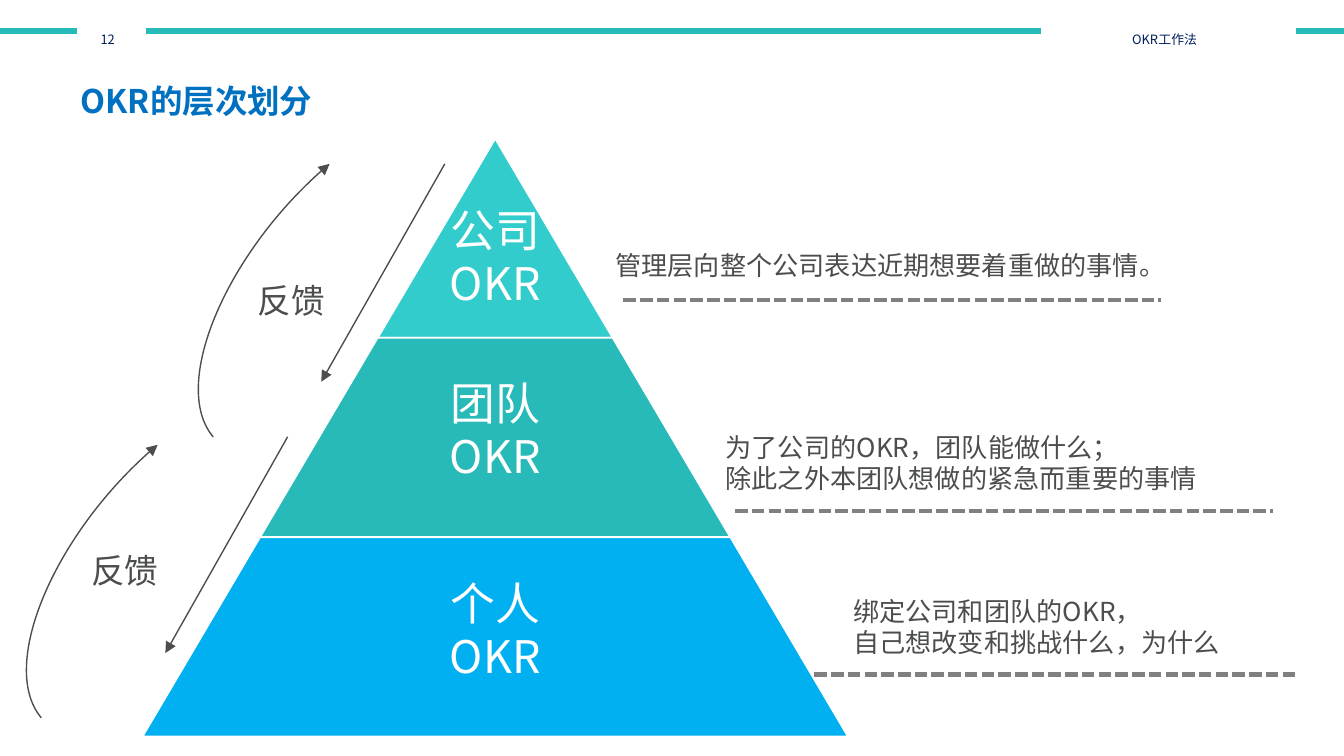
import pptx
import pptx.util
import pptx.dml.color
import pptx.enum.dml
import pptx.enum.shapes
import pptx.enum.text
import lxml.etree
import pptx.oxml.ns

Pt = pptx.util.Pt
qn = pptx.oxml.ns.qn
Align = pptx.enum.text.PP_ALIGN
Anchor = pptx.enum.text.MSO_ANCHOR
Shape = pptx.enum.shapes.MSO_SHAPE
Link = pptx.enum.shapes.MSO_CONNECTOR

THEME = {
    "font": "Noto Sans CJK SC",
    "teal": "28B9B9", "aqua": "33CCCC", "sky": "00B0F0", "white": "FFFFFF",
    "navy": "002060", "blue": "0070C0", "ink": "4B4D4F", "gray": "808080",
    "title": 30, "level": 24, "label": 18, "note": 14, "head": 12,
}
WIDTH, HEIGHT = 720, 405

TITLE = "OKR的层次划分"
HEADS = [("12", 41.8, 36), ("OKR工作法", 558, 136)]
LEVELS = [
    (["公司", "OKR"], "aqua", 126, 28.4),
    (["团队", "OKR"], "teal", 163.4, 0),
    (["个人", "OKR"], "sky", 245.5, 0),
]
NOTES = [
    (["管理层向整个公司表达近期想要着重做的事情。"], 322.6, 130.3, 334, 622, 160.6),
    (["为了公司的OKR，团队能做什么；", "除此之外本团队想做的紧急而重要的事情"],
     381.6, 227.5, 393.8, 681.8, 273.6),
    (["绑定公司和团队的OKR，", "自己想改变和挑战什么，为什么"],
     450, 315.4, 436.3, 694, 361.4),
]
LOOPS = [
    ("反馈", (131, 146.2), (238.3, 87.8, 172.1, 204.5), (109.4, 90)),
    ("反馈", (41.8, 290.9), (154.1, 234, 88.6, 349.9), (17.3, 240.5)),
]
MID, TOP, STEP, RISE = 265.3, 74.2, 126, 106.8
CURVE_W, CURVE_H, TURN = 72, 141.8, 230


def color(name):
    return pptx.dml.color.RGBColor.from_string(THEME[name])


def write(shape, lines, size, tint, bold=False, align=None, sub=False):
    frame = shape.text_frame
    frame.word_wrap = True
    frame.text = "\n".join(lines)
    for para in frame.paragraphs:
        para.alignment = align
        for run in para.runs:
            font = run.font
            font.name = THEME["font"]
            font.size = Pt(THEME[size])
            font.bold = bold
            font.color.rgb = color(tint)
            props = run._r.get_or_add_rPr()
            east = lxml.etree.SubElement(props, qn("a:ea"))
            east.set("typeface", THEME["font"])
            if sub:
                props.set("baseline", "-25000")
    return frame


def add_box(slide, left, top, width, height):
    return slide.shapes.add_textbox(Pt(left), Pt(top), Pt(width), Pt(height))


def add_form(slide, kind, left, top, width, height, fill, edge):
    form = slide.shapes.add_shape(kind, Pt(left), Pt(top), Pt(width), Pt(height))
    form.shadow.inherit = False
    form.fill.solid()
    form.fill.fore_color.rgb = color(fill)
    form.line.color.rgb = color("white")
    form.line.width = Pt(edge)
    return form


def add_line(slide, ends, tint, width, kind=Link.STRAIGHT, arrow=False):
    line = slide.shapes.add_connector(kind, *[Pt(end) for end in ends])
    line.line.color.rgb = color(tint)
    line.line.width = Pt(width)
    props = line._element.spPr
    if arrow:
        tail = lxml.etree.SubElement(props.find(qn("a:ln")), qn("a:tailEnd"))
        tail.set("type", "triangle")
    lxml.etree.SubElement(props, qn("a:effectLst"))
    return line


def add_curve(slide, left, top):
    ends = (left, top, left + CURVE_W, top + CURVE_H)
    curve = add_line(slide, ends, "ink", 0.75, Link.CURVE, True)
    props = curve._element.spPr
    props.find(qn("a:prstGeom")).set("prst", "curvedConnector2")
    props.find(qn("a:xfrm")).set("rot", str(TURN * 60000))


def add_heads(slide):
    add_line(slide, (0, 16.6, WIDTH, 16.6), "teal", 3)
    for text, left, width in HEADS:
        form = add_form(slide, Shape.RECTANGLE, left, 6.5, width, 21.6, "white", 0.75)
        frame = write(form, [text], "head", "navy", align=Align.CENTER, sub=True)
        frame.margin_right = Pt(11.2)
        frame.vertical_anchor = Anchor.MIDDLE


def add_title(slide):
    title = slide.shapes.title
    title.left, title.top, title.width, title.height = Pt(36), Pt(20.2), Pt(424.8), Pt(43.9)
    frame = write(title, [TITLE], "title", "blue", True, Align.LEFT, True)
    frame.vertical_anchor = Anchor.MIDDLE
    frame.paragraphs[0].line_spacing = 0.9


def add_levels(slide):
    for rank, (lines, fill, room, inset) in enumerate(LEVELS):
        top, width = TOP + rank * RISE, STEP * (rank + 1)
        form = add_form(slide, Shape.TRAPEZOID, MID - width / 2, top, width, RISE, fill, 1)
        form.adjustments[0] = STEP / 2 / RISE
        box = add_box(slide, MID - room / 2, top, room, RISE)
        frame = write(box, lines, "level", "white", align=Align.CENTER)
        frame.vertical_anchor = Anchor.MIDDLE
        frame.margin_left = frame.margin_right = frame.margin_bottom = Pt(2.4)
        frame.margin_top = Pt(2.4 + inset)
        for para in frame.paragraphs:
            para.line_spacing = Pt(20)
            para.space_after = Pt(8.4)


def add_loops(slide):
    for text, place, ends, bend in LOOPS:
        add_line(slide, ends, "ink", 0.75, arrow=True)
        add_curve(slide, *bend)
        write(add_box(slide, *place, 53.3, 28.8), [text], "label", "ink")


def add_notes(slide):
    for lines, left, top, start, stop, level in NOTES:
        rule = add_line(slide, (start, level, stop, level), "gray", 2.25)
        rule.line.dash_style = pptx.enum.dml.MSO_LINE.SQUARE_DOT
        width = min(315.4, WIDTH - left)
        height = 7.2 + 17 * len(lines)
        write(add_box(slide, left, top, width, height), lines, "note", "ink")


def main():
    deck = pptx.Presentation()
    deck.slide_width, deck.slide_height = Pt(WIDTH), Pt(HEIGHT)
    slide = deck.slides.add_slide(deck.slide_layouts[5])
    add_heads(slide)
    add_title(slide)
    add_levels(slide)
    add_loops(slide)
    add_notes(slide)
    deck.save("out.pptx")


if __name__ == "__main__":
    main()
